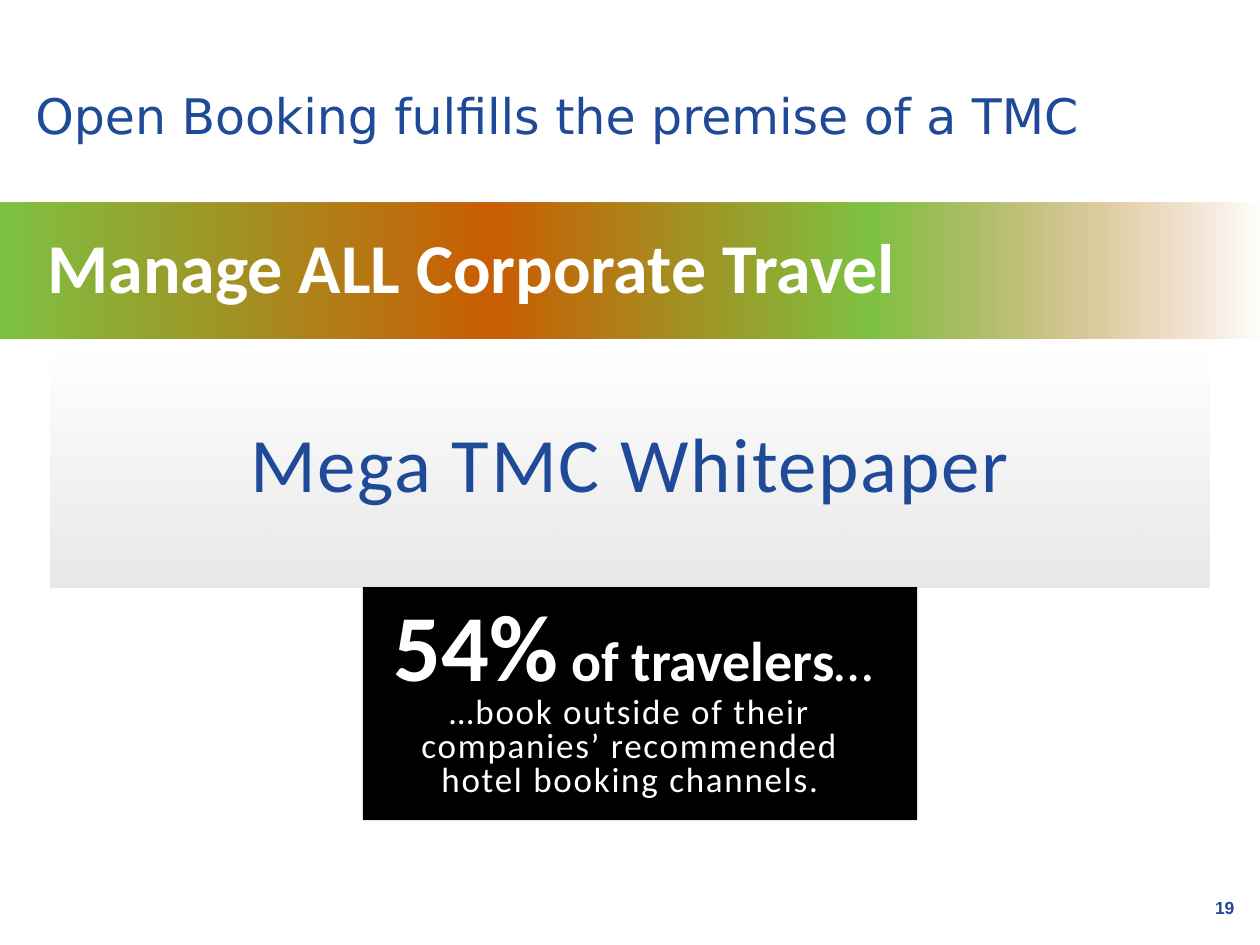
from dataclasses import dataclass
from typing import NamedTuple, Optional

from lxml.etree import SubElement
from pptx import Presentation
from pptx.dml.color import RGBColor
from pptx.enum.shapes import MSO_SHAPE as Preset
from pptx.enum.text import MSO_ANCHOR as Anchor, MSO_AUTO_SIZE as AutoSize, PP_ALIGN as Align
from pptx.oxml.ns import qn
from pptx.util import Inches, Pt


@dataclass(frozen=True)
class Theme:
    """Colours, fonts and type sizes of the slide."""
    blue: str = "1F4A98"
    white: str = "FFFFFF"
    black: str = "000000"
    grey: str = "E8E8E8"
    green: str = "7DC242"
    orange: str = "CA5C02"
    body_font: str = "Calibri"
    title_font: str = "DejaVu Sans"
    number_font: str = "Arial"
    title: int = 28
    banner: int = 40
    paper: int = 44
    figure: int = 54
    figure_label: int = 32
    detail: int = 20
    number: int = 10


class Box(NamedTuple):
    """Left, top, width and height in inches."""
    left: float
    top: float
    width: float
    height: float

    def lengths(self) -> list:
        """Return the four values as lengths."""
        return [Inches(value) for value in self]


class Run(NamedTuple):
    """A stretch of text with its size and weight."""
    text: str
    size: int
    bold: bool = False


class Stop(NamedTuple):
    """A gradient stop."""
    percent: int
    color: str
    clear: bool = False


THEME = Theme()


def write_text(shape, *runs: Run, color: str = THEME.white, font: str = THEME.body_font,
               align=Align.CENTER, anchor=Anchor.MIDDLE, inset: tuple = (0, 0),
               line: float = 0.8, tracking: float = 0, fit=AutoSize.NONE) -> None:
    """Write one formatted paragraph into a shape."""
    frame = shape.text_frame
    frame.word_wrap = True
    frame.auto_size = fit
    frame.vertical_anchor = anchor
    frame.margin_left = frame.margin_right = Inches(inset[0])
    frame.margin_top = frame.margin_bottom = Inches(inset[1])
    paragraph = frame.paragraphs[0]
    paragraph.alignment = align
    paragraph.line_spacing = line
    paragraph.space_before = Pt(0)
    for part in runs:
        run = paragraph.add_run()
        run.text = part.text
        run.font.name = font
        run.font.size = Pt(part.size)
        run.font.bold = part.bold
        run.font.color.rgb = RGBColor.from_string(color)
        if tracking:
            run.font._element.set("spc", str(int(tracking * 100)))


def add_panel(slide, box: Box, color: Optional[str] = None,
              stops: tuple = (), angle: int = 0):
    """Add a borderless rectangle with a solid or gradient fill."""
    panel = slide.shapes.add_shape(Preset.RECTANGLE, *box.lengths())
    panel.shadow.inherit = False
    panel.line.fill.background()
    if color:
        panel.fill.solid()
        panel.fill.fore_color.rgb = RGBColor.from_string(color)
        return panel
    panel.fill.gradient()
    panel.fill.gradient_angle = angle
    stop_list = panel._element.spPr.find(".//" + qn("a:gsLst"))
    stop_list.clear()
    for stop in stops:
        entry = SubElement(stop_list, qn("a:gs"), pos=str(stop.percent * 1000))
        shade = SubElement(entry, qn("a:srgbClr"), val=stop.color)
        if stop.clear:
            SubElement(shade, qn("a:alpha"), val="0")
    return panel


def add_label(slide, box: Box, *runs: Run, **style) -> None:
    """Add a text box."""
    write_text(slide.shapes.add_textbox(*box.lengths()), *runs, **style)


def main() -> None:
    """Build and save the slide."""
    deck = Presentation()
    deck.slide_width, deck.slide_height = Inches(10), Inches(7.5)
    slide = deck.slides.add_slide(deck.slide_layouts[5])

    title = slide.shapes.title
    title.left, title.top, title.width, title.height = Box(0.28, 0, 9.42, 1.16).lengths()
    write_text(title, Run("Open Booking fulfills the premise of a TMC", THEME.title),
               color=THEME.blue, font=THEME.title_font, align=Align.LEFT,
               anchor=Anchor.BOTTOM, line=0.95)

    whitepaper = add_panel(slide, Box(0.4, 2.81, 9.2, 1.85), angle=270,
                           stops=(Stop(0, THEME.grey, True), Stop(100, THEME.grey)))
    write_text(whitepaper, Run("Mega TMC Whitepaper", THEME.paper),
               color=THEME.blue, inset=(0.2, 0.05), tracking=1)

    add_panel(slide, Box(0, 1.61, 10, 1.08), angle=180,
              stops=(Stop(0, THEME.orange, True), Stop(31, THEME.green),
                     Stop(61, THEME.orange), Stop(100, THEME.green)))
    add_label(slide, Box(0.38, 1.87, 7.78, 0.58),
              Run("Manage ALL Corporate Travel", THEME.banner, True),
              align=Align.LEFT, line=0.85, fit=AutoSize.SHAPE_TO_FIT_TEXT)

    statistic = add_panel(slide, Box(2.88, 4.66, 4.4, 1.85), THEME.black)
    write_text(statistic, Run("54%", THEME.figure, True),
               Run(" of travelers", THEME.figure_label, True),
               Run("… ", THEME.figure_label), anchor=Anchor.TOP, inset=(0.2, 0.17))
    add_label(slide, Box(2.8, 5.36, 4.4, 1.15),
              Run("…book outside of their companies’ recommended hotel booking channels.",
                  THEME.detail),
              anchor=Anchor.BOTTOM, inset=(0.2, 0.17), tracking=1,
              fit=AutoSize.SHAPE_TO_FIT_TEXT)

    add_label(slide, Box(9.46, 7.12, 0.52, 0.19), Run("19", THEME.number, True),
              color=THEME.blue, font=THEME.number_font, anchor=Anchor.BOTTOM,
              inset=(0.02, 0.02), line=0.9, fit=AutoSize.SHAPE_TO_FIT_TEXT)
    deck.save("out.pptx")


if __name__ == "__main__":
    main()
